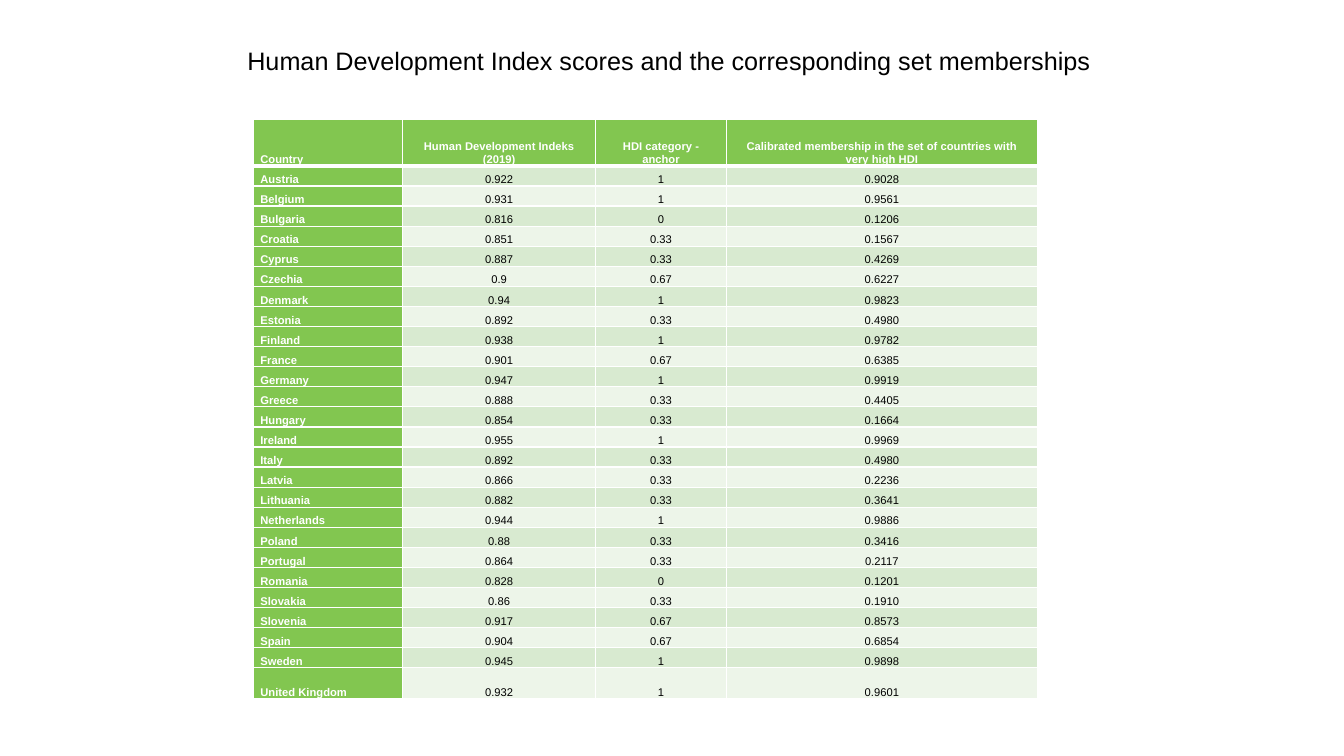
from lxml import etree
from pptx import Presentation
from pptx.dml.color import RGBColor
from pptx.enum.text import MSO_ANCHOR, MSO_AUTO_SIZE, PP_ALIGN
from pptx.oxml.ns import qn
from pptx.util import Cm, Pt

WHITE = RGBColor(0xFF, 0xFF, 0xFF)
BLACK = RGBColor(0x00, 0x00, 0x00)
GREEN = RGBColor(0x82, 0xC6, 0x50)
BAND_DARK = RGBColor(0xD8, 0xEA, 0xD0)
BAND_LIGHT = RGBColor(0xED, 0xF5, 0xE9)

HEADER = ("Country", "Human Development Indeks (2019)", "HDI category - anchor",
          "Calibrated membership in the set of countries with very high HDI")
COUNTRIES = [
    ("Austria", "0.922", "1", "0.9028"),
    ("Belgium", "0.931", "1", "0.9561"),
    ("Bulgaria", "0.816", "0", "0.1206"),
    ("Croatia", "0.851", "0.33", "0.1567"),
    ("Cyprus", "0.887", "0.33", "0.4269"),
    ("Czechia", "0.9", "0.67", "0.6227"),
    ("Denmark", "0.94", "1", "0.9823"),
    ("Estonia", "0.892", "0.33", "0.4980"),
    ("Finland", "0.938", "1", "0.9782"),
    ("France", "0.901", "0.67", "0.6385"),
    ("Germany", "0.947", "1", "0.9919"),
    ("Greece", "0.888", "0.33", "0.4405"),
    ("Hungary", "0.854", "0.33", "0.1664"),
    ("Ireland", "0.955", "1", "0.9969"),
    ("Italy", "0.892", "0.33", "0.4980"),
    ("Latvia", "0.866", "0.33", "0.2236"),
    ("Lithuania", "0.882", "0.33", "0.3641"),
    ("Netherlands", "0.944", "1", "0.9886"),
    ("Poland", "0.88", "0.33", "0.3416"),
    ("Portugal", "0.864", "0.33", "0.2117"),
    ("Romania", "0.828", "0", "0.1201"),
    ("Slovakia", "0.86", "0.33", "0.1910"),
    ("Slovenia", "0.917", "0.67", "0.8573"),
    ("Spain", "0.904", "0.67", "0.6854"),
    ("Sweden", "0.945", "1", "0.9898"),
    ("United Kingdom", "0.932", "1", "0.9601"),
]
ROWS = [HEADER] + COUNTRIES
COL_WIDTHS = (3.77, 4.86, 3.3, 7.83)
TABLE_HEIGHT, HEADER_HEIGHT, LAST_HEIGHT = 14.63, 1.18, 0.78


def add_border(cell, side, width):
    ln = etree.SubElement(cell._tc.get_or_add_tcPr(), qn(f"a:ln{side}"), w=str(Pt(width)))
    fill = etree.SubElement(ln, qn("a:solidFill"))
    etree.SubElement(fill, qn("a:srgbClr"), val=str(WHITE))


def format_run(r, size, color, bold=False):
    r.font.name = "Arial"
    r.font.size = Pt(size)
    r.font.bold = bold
    r.font.color.rgb = color


prs = Presentation()
prs.slide_width, prs.slide_height = Cm(33.87), Cm(19.05)
s = prs.slides.add_slide(prs.slide_layouts[5])

# Title
title = s.shapes.title
title.left, title.top, title.width, title.height = Cm(3.94), Cm(0.91), Cm(26.01), Cm(1.12)
tf = title.text_frame
tf.text = "Human Development Index scores and the corresponding set memberships"
tf.word_wrap = True
tf.auto_size = MSO_AUTO_SIZE.NONE
tf.vertical_anchor = MSO_ANCHOR.BOTTOM
tf.margin_right = Cm(0.43)
tf.paragraphs[0].alignment = PP_ALIGN.CENTER
format_run(tf.paragraphs[0].runs[0], 18, BLACK)

# Table grid
table = s.shapes.add_table(len(ROWS), len(HEADER), Cm(6.38), Cm(3),
                           Cm(sum(COL_WIDTHS)), Cm(TABLE_HEIGHT)).table
for col, width in zip(table.columns, COL_WIDTHS):
    col.width = Cm(width)
for row in table.rows:
    row.height = Cm((TABLE_HEIGHT - HEADER_HEIGHT - LAST_HEIGHT) / (len(ROWS) - 2))
table.rows[0].height = Cm(HEADER_HEIGHT)
table.rows[len(ROWS) - 1].height = Cm(LAST_HEIGHT)

# Table cells
for i, values in enumerate(ROWS):
    for j, value in enumerate(values):
        cell = table.cell(i, j)
        heading = i == 0 or j == 0
        cell.vertical_anchor = MSO_ANCHOR.BOTTOM
        cell.margin_left = cell.margin_right = Cm(0.18)
        cell.margin_top = cell.margin_bottom = 0
        for side in "LRTB":
            under_header = (i, side) in ((0, "B"), (1, "T"))
            add_border(cell, side, 3 if under_header else 1)
        cell.fill.solid()
        cell.fill.fore_color.rgb = GREEN if heading else BAND_DARK if i % 2 else BAND_LIGHT
        p = cell.text_frame.paragraphs[0]
        p.text = value
        p.alignment = PP_ALIGN.CENTER if j else PP_ALIGN.JUSTIFY
        format_run(p.runs[0], 8, WHITE if heading else BLACK, heading)

prs.save("out.pptx")
